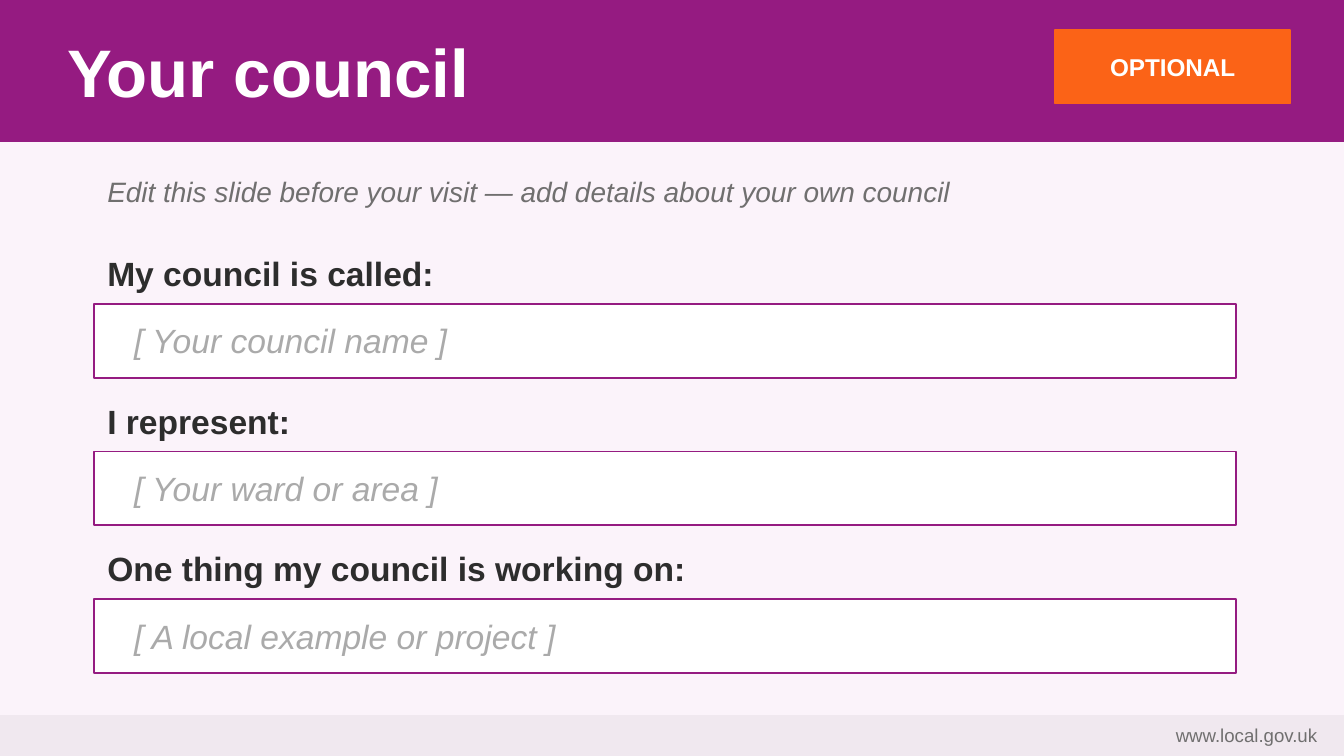
from pptx import Presentation
from pptx import util as u
from pptx.dml import color
from pptx.enum import shapes, text

COLOURS = {
    "background": "FBF3FA",
    "purple": "951B81",
    "orange": "FB6317",
    "white": "FFFFFF",
    "ink": "2D2D2D",
    "grey": "706F6F",
    "hint": "AAAAAA",
    "footer": "F0E8EF",
}

FIELDS = [
    ("My council is called:", "[ Your council name ]"),
    ("I represent:", "[ Your ward or area ]"),
    ("One thing my council is working on:", "[ A local example or project ]"),
]
SLIDE_WIDTH = 10
SLIDE_HEIGHT = SLIDE_WIDTH * 9 / 16
FIRST_FIELD_TOP = 1.82
FIELD_STEP = 1.1


def rgb(name):
    return color.RGBColor.from_string(COLOURS[name])


def inches(*lengths):
    return [u.Inches(round(length, 4)) for length in lengths]


def add_panel(page, place, fill, line=None):
    """Add a filled rectangle, outlined in its own colour unless told otherwise."""
    panel = page.shapes.add_shape(shapes.MSO_SHAPE.RECTANGLE, *inches(*place))
    panel.shadow.inherit = False
    panel.fill.solid()
    panel.fill.fore_color.rgb = rgb(fill)
    panel.line.color.rgb = rgb(line or fill)
    panel.line.width = u.Pt(1)


def write(box, words, size, colour, align=text.PP_ALIGN.LEFT, flush=False, **style):
    """Fill a box with one line of text; flush removes its margins."""
    frame = box.text_frame
    frame.word_wrap = True
    frame.auto_size = text.MSO_AUTO_SIZE.NONE
    frame.vertical_anchor = text.MSO_ANCHOR.MIDDLE
    if flush:
        for side in ("left", "top", "right", "bottom"):
            setattr(frame, f"margin_{side}", 0)
    para = frame.paragraphs[0]
    para.alignment = align
    span = para.add_run()
    span.text = words
    span.font.color.rgb = rgb(colour)
    for key, value in {"name": "Arial", "size": u.Pt(size), **style}.items():
        setattr(span.font, key, value)


def add_text(page, place, *content, **style):
    write(page.shapes.add_textbox(*inches(*place)), *content, **style)


def add_title(page, place, words):
    title = page.shapes.title
    title.left, title.top, title.width, title.height = inches(*place)
    write(title, words, 36, "white", flush=True, bold=True)
    # Bring the title in front of the header band
    page.shapes._spTree.append(title._element)


def add_field(page, top, label, hint):
    """Add a label with an outlined entry box below it."""
    add_text(page, (0.7, top, 8.5, 0.42), label, 18, "ink", bold=True)
    add_panel(page, (0.7, top + 0.44, 8.5, 0.55), "white", line="purple")
    add_text(page, (0.9, top + 0.46, 8.1, 0.5), hint, 18, "hint", italic=True)


def main():
    deck = Presentation()
    deck.slide_width, deck.slide_height = inches(SLIDE_WIDTH, SLIDE_HEIGHT)
    page = deck.slides.add_slide(deck.slide_layouts[5])
    page.background.fill.solid()
    page.background.fill.fore_color.rgb = rgb("background")

    # Header band with title and badge
    add_panel(page, (0, 0, SLIDE_WIDTH, 1.05), "purple")
    add_title(page, (0.5, 0.1, 7.2, 0.85), "Your council")
    badge = (7.85, 0.22, 1.75, 0.55)
    add_panel(page, badge, "orange")
    add_text(page, badge, "OPTIONAL", 13, "white",
             align=text.PP_ALIGN.CENTER, flush=True, bold=True)

    # Instruction and fields to complete
    add_text(page, (0.7, 1.2, 8.6, 0.45),
             "Edit this slide before your visit — add details about your own council",
             15, "grey", italic=True)
    for row, (label, hint) in enumerate(FIELDS):
        add_field(page, FIRST_FIELD_TOP + row * FIELD_STEP, label, hint)

    # Footer
    add_panel(page, (0, 5.33, SLIDE_WIDTH, 0.3), "footer")
    add_text(page, (7.5, 5.33, 2.3, 0.28), "www.local.gov.uk", 10, "grey",
             align=text.PP_ALIGN.RIGHT, flush=True)

    deck.save("out.pptx")


if __name__ == "__main__":
    main()
